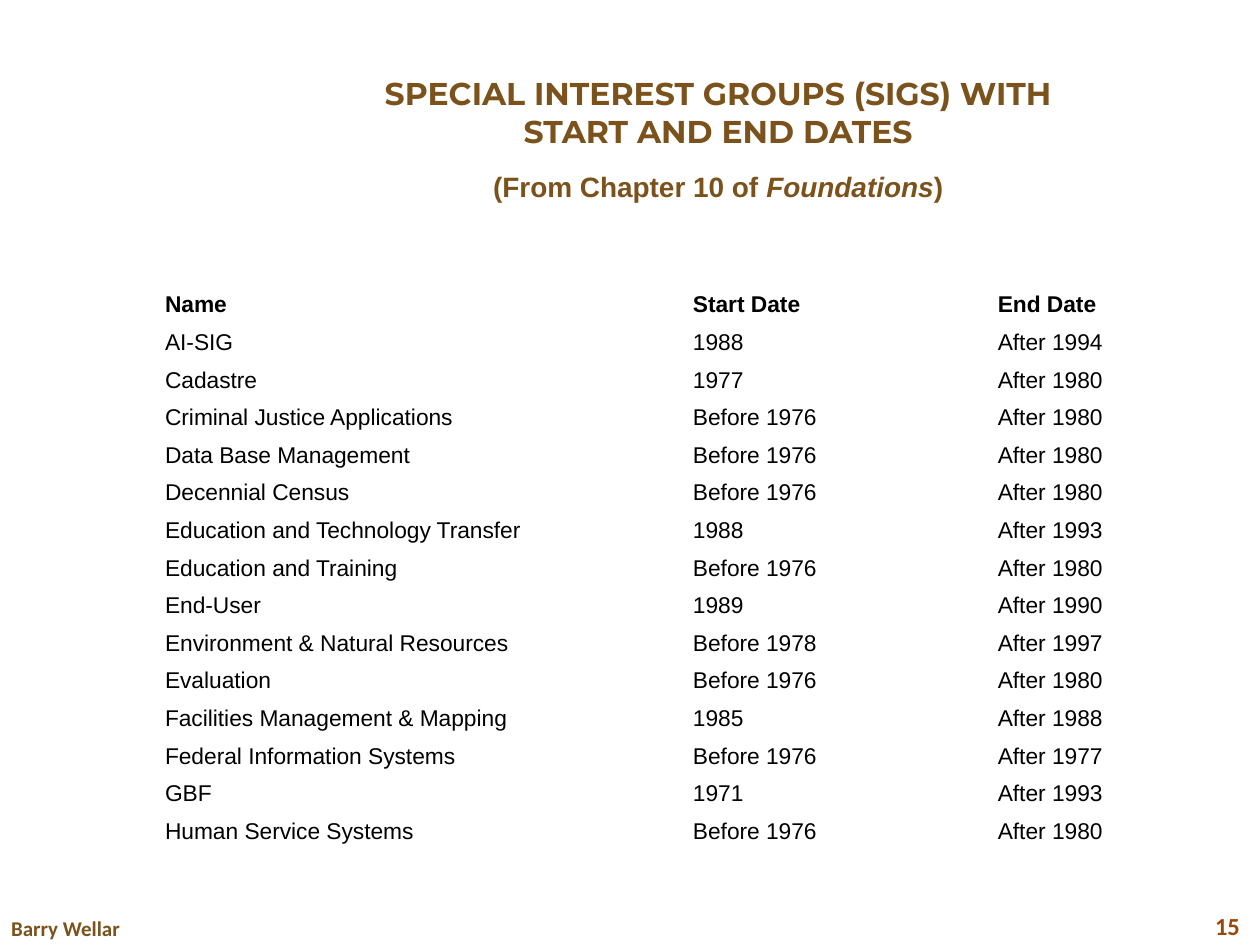
from typing import NamedTuple

from pptx import Presentation
from pptx.dml.color import RGBColor as Rgb
from pptx.enum.text import MSO_ANCHOR as Anchor, MSO_AUTO_SIZE as Fit, PP_ALIGN as Align
from pptx.util import Inches, Pt

BROWN = "7B521B"
RUST = "984807"
BLACK = "000000"


class Style(NamedTuple):
    font: str
    size: float
    color: str
    bold: bool = True


class Run(NamedTuple):
    text: str
    slant: bool = False


class Box(NamedTuple):
    left: float
    top: float
    width: float
    height: float


class Label(NamedTuple):
    box: Box
    runs: list[Run]
    style: Style
    align: Align
    anchor: Anchor


class Group(NamedTuple):
    name: str
    start: str
    end: str


def paint(font, color: str) -> None:
    font.color.rgb = Rgb.from_string(color)


def write(para, runs: list[Run], style: Style) -> None:
    for item in runs:
        run = para.add_run()
        run.text = item.text
        font = run.font
        font.name = style.font
        font.size = Pt(style.size)
        font.bold = style.bold
        font.italic = item.slant
        paint(font, style.color)


def fill(shape, label: Label) -> None:
    box = label.box
    shape.left, shape.top = Inches(box.left), Inches(box.top)
    shape.width, shape.height = Inches(box.width), Inches(box.height)
    frame = shape.text_frame
    frame.word_wrap = True
    frame.auto_size = Fit.NONE
    frame.vertical_anchor = label.anchor
    para = frame.paragraphs[0]
    para.alignment = label.align
    write(para, label.runs, label.style)


def add_label(slide, label: Label) -> None:
    fill(slide.shapes.add_textbox(0, 0, 0, 0), label)


def add_grid(slide, box: Box, widths: list[float], groups: list[Group]) -> None:
    size = [Inches(side) for side in box]
    table = slide.shapes.add_table(len(groups), len(widths), *size).table
    table.first_row = True
    table.horz_banding = False
    for col, width in zip(table.columns, widths):
        col.width = Inches(width)
    for index, (row, group) in enumerate(zip(table.rows, groups)):
        style = Style("Arial", 13, BLACK, index == 0)
        for cell, text in zip(row.cells, group):
            cell.fill.background()
            cell.margin_left = cell.margin_right = Inches(0.07)
            cell.margin_top = cell.margin_bottom = 0
            para = cell.text_frame.paragraphs[0]
            para.line_spacing = 1.15
            para.space_after = Pt(10)
            write(para, [Run(text)], style)


TITLE = Label(
    Box(2.6, 0.54, 6.2, 0.61),
    [Run("SPECIAL INTEREST GROUPS (SIGS) WITH START AND END DATES")],
    Style("Montserrat", 18, BROWN), Align.CENTER, Anchor.TOP,
)
LABELS = [
    Label(
        Box(2.6, 1.29, 6.2, 0.37),
        [Run("(From Chapter 10 of "), Run("Foundations", True), Run(")")],
        Style("Arial", 16, BROWN), Align.CENTER, Anchor.MIDDLE,
    ),
    Label(
        Box(7.61, 7.15, 2.33, 0.4), [Run("15")],
        Style("Calibri", 14, RUST), Align.RIGHT, Anchor.MIDDLE,
    ),
    Label(
        Box(-0.01, 7.22, 1.53, 0.3), [Run("Barry Wellar")],
        Style("Calibri", 12, BROWN), Align.LEFT, Anchor.TOP,
    ),
]
GROUPS = [
    Group("Name", "Start Date", "End Date"),
    Group("AI-SIG", "1988", "After 1994"),
    Group("Cadastre", "1977", "After 1980"),
    Group("Criminal Justice Applications", "Before 1976", "After 1980"),
    Group("Data Base Management", "Before 1976", "After 1980"),
    Group("Decennial Census", "Before 1976", "After 1980"),
    Group("Education and Technology Transfer", "1988", "After 1993"),
    Group("Education and Training", "Before 1976", "After 1980"),
    Group("End-User", "1989", "After 1990"),
    Group("Environment & Natural Resources", "Before 1978", "After 1997"),
    Group("Evaluation", "Before 1976", "After 1980"),
    Group("Facilities Management & Mapping", "1985", "After 1988"),
    Group("Federal Information Systems", "Before 1976", "After 1977"),
    Group("GBF", "1971", "After 1993"),
    Group("Human Service Systems", "Before 1976", "After 1980"),
]


def main() -> None:
    deck = Presentation()
    deck.slide_width, deck.slide_height = Inches(10), Inches(7.5)
    slide = deck.slides.add_slide(deck.slide_layouts[5])
    fill(slide.shapes.title, TITLE)
    add_grid(slide, Box(1.24, 2.29, 8.06, 4.48), [4.19, 2.42, 1.45], GROUPS)
    for label in LABELS:
        add_label(slide, label)
    deck.save("out.pptx")


if __name__ == "__main__":
    main()
